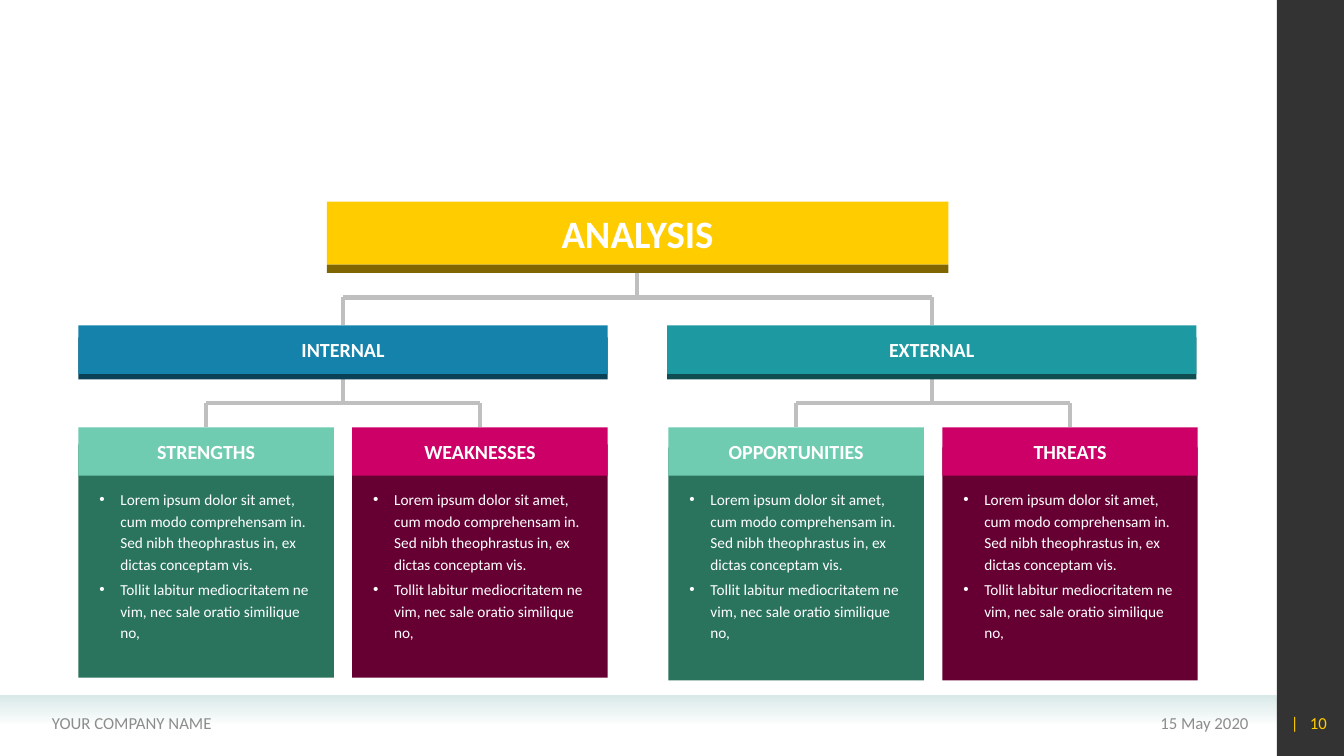
from lxml.etree import SubElement
from pptx import Presentation
from pptx.dml.color import RGBColor
from pptx.enum.shapes import MSO_CONNECTOR, MSO_SHAPE
from pptx.enum.text import MSO_ANCHOR, MSO_AUTO_SIZE, PP_ALIGN
from pptx.oxml.ns import qn
from pptx.util import Pt

WHITE, GREY, AMBER = "FFFFFF", "8C8C8C", "FFCC00"
POINTS = [
    "Lorem ipsum dolor sit amet, cum modo comprehensam in. "
    "Sed nibh theophrastus in, ex dictas conceptam vis.",
    "Tollit labitur mediocritatem ne vim, nec sale oratio similique no,",
]
QUADRANT_WIDTH, QUADRANT_STEP = 182.5, 195.6
QUADRANT_TOP, POINTS_TOP = 305.3, 347.8

# Branch: name, left, colour, edge colour, quadrants' left, body top, quadrant names
BRANCHES = [
    ("INTERNAL", 56, "1482AB", "0A4156", 56, 317.5, ("STRENGTHS", "WEAKNESSES")),
    ("EXTERNAL", 476.5, "1D9AA1", "0F4D50", 477.5, 319.5, ("OPPORTUNITIES", "THREATS")),
]
QUADRANT_COLOURS = [("70CCB1", "2A745E"), ("CC0066", "660033")]


def colour(code):
    return RGBColor.from_string(code)


def apply_format(target, values):
    for attribute, value in values.items():
        setattr(target, attribute, value)


def write(frame, lines, size, ink=WHITE, bold=False, align=PP_ALIGN.CENTER,
          frame_format=None, paragraph_format=None):
    """Fill a text frame, one paragraph per line."""
    apply_format(frame, {"word_wrap": True, "auto_size": MSO_AUTO_SIZE.NONE,
                         "vertical_anchor": MSO_ANCHOR.MIDDLE, **(frame_format or {})})
    for index, line in enumerate(lines):
        paragraph = frame.paragraphs[0] if index == 0 else frame.add_paragraph()
        apply_format(paragraph, {"alignment": align, **(paragraph_format or {})})
        run = paragraph.add_run()
        run.text = line
        apply_format(run.font, {"name": "Calibri", "size": Pt(size), "bold": bold})
        run.font.color.rgb = colour(ink)


def add_block(slide, left, top, width, height, fill):
    block = slide.shapes.add_shape(
        MSO_SHAPE.RECTANGLE, Pt(left), Pt(top), Pt(width), Pt(height))
    block.shadow.inherit = False
    block.line.fill.background()
    block.fill.solid()
    block.fill.fore_color.rgb = colour(fill)
    return block


def add_label(slide, left, width, text, ink, align):
    label = slide.shapes.add_textbox(Pt(left), Pt(502), Pt(width), Pt(29))
    write(label.text_frame, [text], 12, ink, align=align)


def add_line(slide, x1, y1, x2, y2):
    line = slide.shapes.add_connector(
        MSO_CONNECTOR.STRAIGHT, Pt(x1), Pt(y1), Pt(x2), Pt(y2))
    line.line.width = Pt(3)
    line.line.color.rgb = colour("BFBFBF")
    SubElement(line._element.spPr, qn("a:effectLst"))


def add_fork(slide, stem, top, bar, bottom, tips):
    """Stem, crossbar and one prong per child."""
    add_line(slide, stem, top, stem, bar)
    add_line(slide, tips[0], bar, tips[-1], bar)
    for tip in tips:
        add_line(slide, tip, bar, tip, bottom)


def add_bullets(paragraph):
    properties = paragraph._p.get_or_add_pPr()
    properties.set("marL", str(Pt(15)))
    properties.set("indent", str(-Pt(15)))
    SubElement(properties, qn("a:buFont")).set("typeface", "Arial")
    SubElement(properties, qn("a:buChar")).set("char", "•")


def add_quadrant(slide, left, body_top, name, header_fill, body_fill):
    body = add_block(slide, left, body_top, QUADRANT_WIDTH, 166.5, body_fill)
    write(body.text_frame, POINTS, 10.9, align=PP_ALIGN.LEFT,
          frame_format={"vertical_anchor": MSO_ANCHOR.TOP, "margin_left": Pt(15),
                        "margin_right": Pt(16), "margin_top": Pt(POINTS_TOP - body_top)},
          paragraph_format={"line_spacing": Pt(15.5), "space_before": Pt(2.2)})
    for paragraph in body.text_frame.paragraphs:
        add_bullets(paragraph)
    header = add_block(slide, left, QUADRANT_TOP, QUADRANT_WIDTH, 34.5, header_fill)
    write(header.text_frame, [name], 14.3, bold=True)


def add_branch(slide, name, left, fill, edge, quadrant_left, body_top, quadrants):
    lefts = [quadrant_left + i * QUADRANT_STEP for i in range(len(quadrants))]
    tips = [x + QUADRANT_WIDTH / 2 for x in lefts]
    add_fork(slide, left + 189, 271, 288, QUADRANT_TOP, tips)
    add_block(slide, left, 241, 378, 30, edge)
    banner = add_block(slide, left, 232.5, 378, 34.5, fill)
    write(banner.text_frame, [name], 14.3, bold=True)
    for x, quadrant, fills in zip(lefts, quadrants, QUADRANT_COLOURS):
        add_quadrant(slide, x, body_top, quadrant, *fills)


def add_root(slide):
    """The title is the root of the tree, with a dark edge below it."""
    title = slide.shapes.title
    apply_format(title, {"left": Pt(233.5), "top": Pt(144),
                         "width": Pt(444), "height": Pt(45)})
    title.fill.solid()
    title.fill.fore_color.rgb = colour(AMBER)
    write(title.text_frame, ["ANALYSIS"], 27.7, bold=True)
    add_block(slide, 233.5, 189, 444, 6, "806600")


def add_frame(slide):
    """Footer band, side bar and their texts."""
    band = add_block(slide, 0, 496.5, 912, 22.5, WHITE)
    band.fill.gradient()
    band.fill.gradient_angle = 270
    for stop, code in zip(band.fill.gradient_stops, ("D9E9E8", WHITE)):
        stop.color.rgb = colour(code)
    add_block(slide, 912, 0, 48, 540, "333333")
    add_label(slide, 655, 244, "15 May 2020", GREY, PP_ALIGN.RIGHT)
    add_label(slide, 30, 353, "YOUR COMPANY NAME", GREY, PP_ALIGN.LEFT)
    add_label(slide, 907, 48, "|   10", AMBER, PP_ALIGN.RIGHT)


def main():
    deck = Presentation()
    apply_format(deck, {"slide_width": Pt(960), "slide_height": Pt(540)})
    slide = deck.slides.add_slide(deck.slide_layouts.get_by_name("Title Only"))
    add_frame(slide)
    add_root(slide)
    add_fork(slide, 455, 195, 212.5, 232.5, [branch[1] + 189 for branch in BRANCHES])
    for branch in BRANCHES:
        add_branch(slide, *branch)
    deck.save("out.pptx")


if __name__ == "__main__":
    main()
